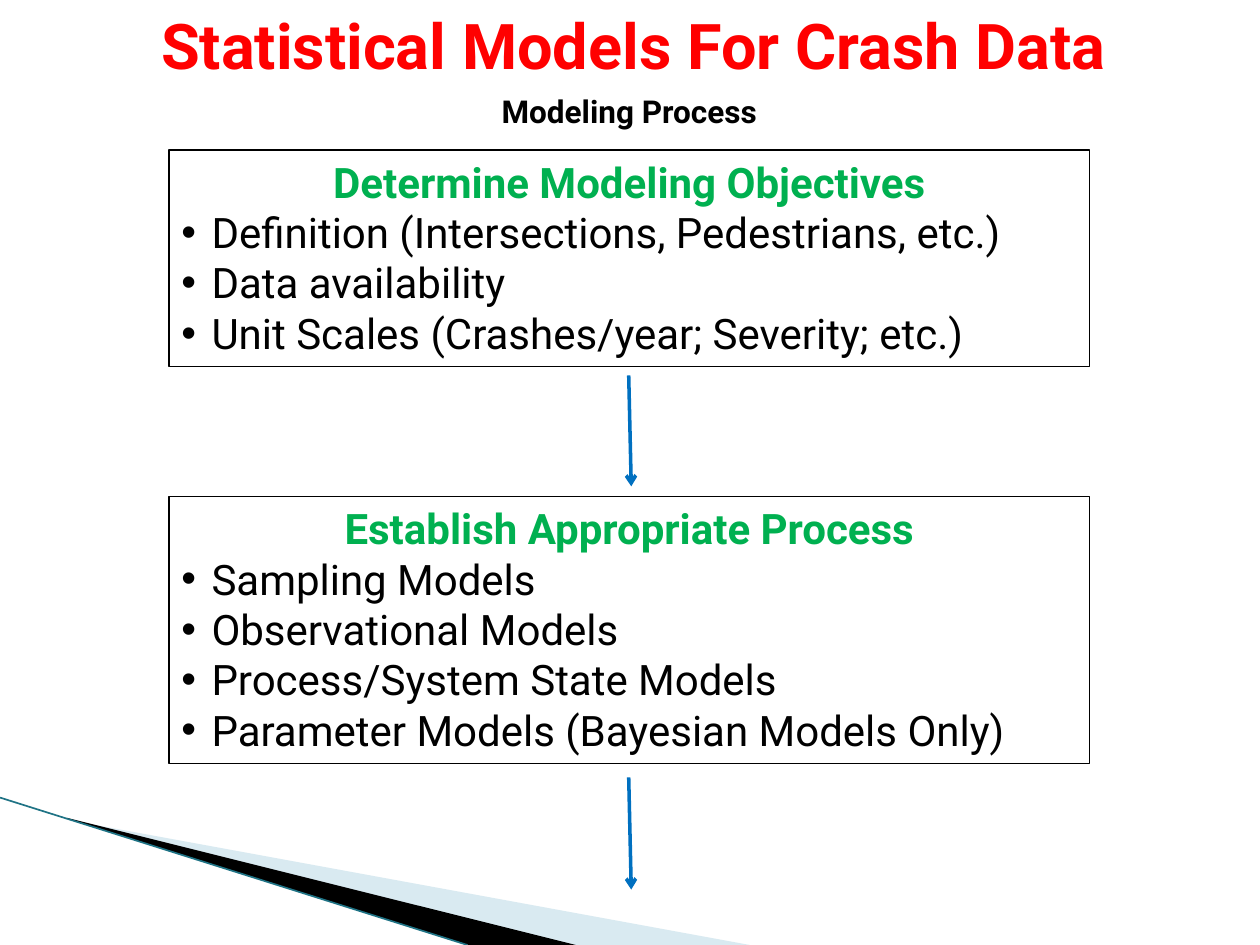
from lxml import etree
from pptx import Presentation
from pptx.dml.color import RGBColor
from pptx.enum.shapes import MSO_CONNECTOR, MSO_SHAPE
from pptx.enum.text import MSO_ANCHOR, PP_ALIGN
from pptx.oxml.ns import qn
from pptx.util import Inches, Pt

STRAIGHT = MSO_CONNECTOR.STRAIGHT
RECTANGLE = MSO_SHAPE.RECTANGLE
TOP = MSO_ANCHOR.TOP
CENTER, LEFT = PP_ALIGN.CENTER, PP_ALIGN.LEFT

FONT = "Roboto"
COLORS = {
    "title": "FF0000",
    "heading": "00B050",
    "text": "000000",
    "arrow": "0070C0",
    "pale": "A0CBDC",
    "wedge": "000000",
    "edge": "1F7385",
}


def style_text(paragraph, size, color, bold, align):
    paragraph.alignment = align
    font = paragraph.font
    for target in [font] + [run.font for run in paragraph.runs]:
        target.name = FONT
        target.size = Pt(size)
        target.bold = bold
        target.color.rgb = RGBColor.from_string(COLORS[color])


def add_line(start, end, color, width):
    line = slide.shapes.add_connector(STRAIGHT, *[Inches(v) for v in start + end])
    line.line.color.rgb = RGBColor.from_string(COLORS[color])
    line.line.width = Pt(width)
    etree.SubElement(line._element.spPr, qn("a:effectLst"))
    return line


prs = Presentation()
prs.slide_width = Inches(10)
prs.slide_height = Inches(7.5)
slide = prs.slides.add_slide(prs.slide_layouts[6])

wedges = [
    ("pale", 40, [(0.55, 6.51), (5.95, 7.5), (4.56, 7.5), (0.55, 6.5)]),
    ("wedge", 100, [(0.53, 6.49), (4.57, 7.5), (3.72, 7.5), (0.54, 6.5)]),
]
for color, opacity, points in wedges:
    corners = [(Inches(x), Inches(y)) for x, y in points]
    builder = slide.shapes.build_freeform(*corners[0])
    builder.add_line_segments(corners[1:], close=True)
    wedge = builder.convert_to_shape()
    wedge.shadow.inherit = False
    wedge.line.fill.background()
    wedge.fill.solid()
    wedge.fill.fore_color.rgb = RGBColor.from_string(COLORS[color])
    if opacity < 100:
        fill_color = wedge._element.spPr.find(".//" + qn("a:srgbClr"))
        etree.SubElement(fill_color, qn("a:alpha"), val=str(opacity * 1000))

add_line((0, 6.33), (3.71, 7.5), "edge", 0.95)

headlines = [
    ("Statistical Models For Crash Data", 0.56, 0, 8.94, 0.7, 36, "title"),
    ("Modeling Process", 0.38, 0.68, 9.23, 0.4, 18, "text"),
]
for wording, left, top, width, height, size, color in headlines:
    headline = slide.shapes.add_textbox(*[Inches(v) for v in (left, top, width, height)])
    headline.text_frame.word_wrap = True
    headline.text_frame.text = wording
    style_text(headline.text_frame.paragraphs[0], size, color, True, CENTER)

steps = [
    (1.19, 1.72, "Determine Modeling Objectives", [
        "Definition (Intersections, Pedestrians, etc.)",
        "Data availability",
        "Unit Scales (Crashes/year; Severity; etc.)",
    ]),
    (3.94, 2.12, "Establish Appropriate Process", [
        "Sampling Models",
        "Observational Models",
        "Process/System State Models",
        "Parameter Models (Bayesian Models Only)",
    ]),
]
for top, height, heading, points in steps:
    step = slide.shapes.add_shape(
        RECTANGLE, Inches(1.34), Inches(top), Inches(7.31), Inches(height))
    step.shadow.inherit = False
    step.fill.background()
    step.line.color.rgb = RGBColor.from_string(COLORS["text"])
    step.line.width = Pt(0.75)
    frame = step.text_frame
    frame.word_wrap = True
    frame.vertical_anchor = TOP
    frame.text = heading
    style_text(frame.paragraphs[0], 24, "heading", True, CENTER)
    for point in points:
        bullet = frame.add_paragraph()
        bullet.text = point
        properties = bullet._p.get_or_add_pPr()
        properties.set("marL", str(Inches(0.24)))
        properties.set("indent", str(-Inches(0.24)))
        etree.SubElement(properties, qn("a:buFont"), typeface="Arial")
        etree.SubElement(properties, qn("a:buChar"), char="•")
        style_text(bullet, 24, "text", False, LEFT)

for start_y, end_y in [(2.98, 3.86), (6.17, 7.06)]:
    arrow = add_line((4.99, start_y), (5.01, end_y), "arrow", 2)
    etree.SubElement(arrow.line._get_or_add_ln(), qn("a:tailEnd"), type="arrow")

prs.save("out.pptx")
